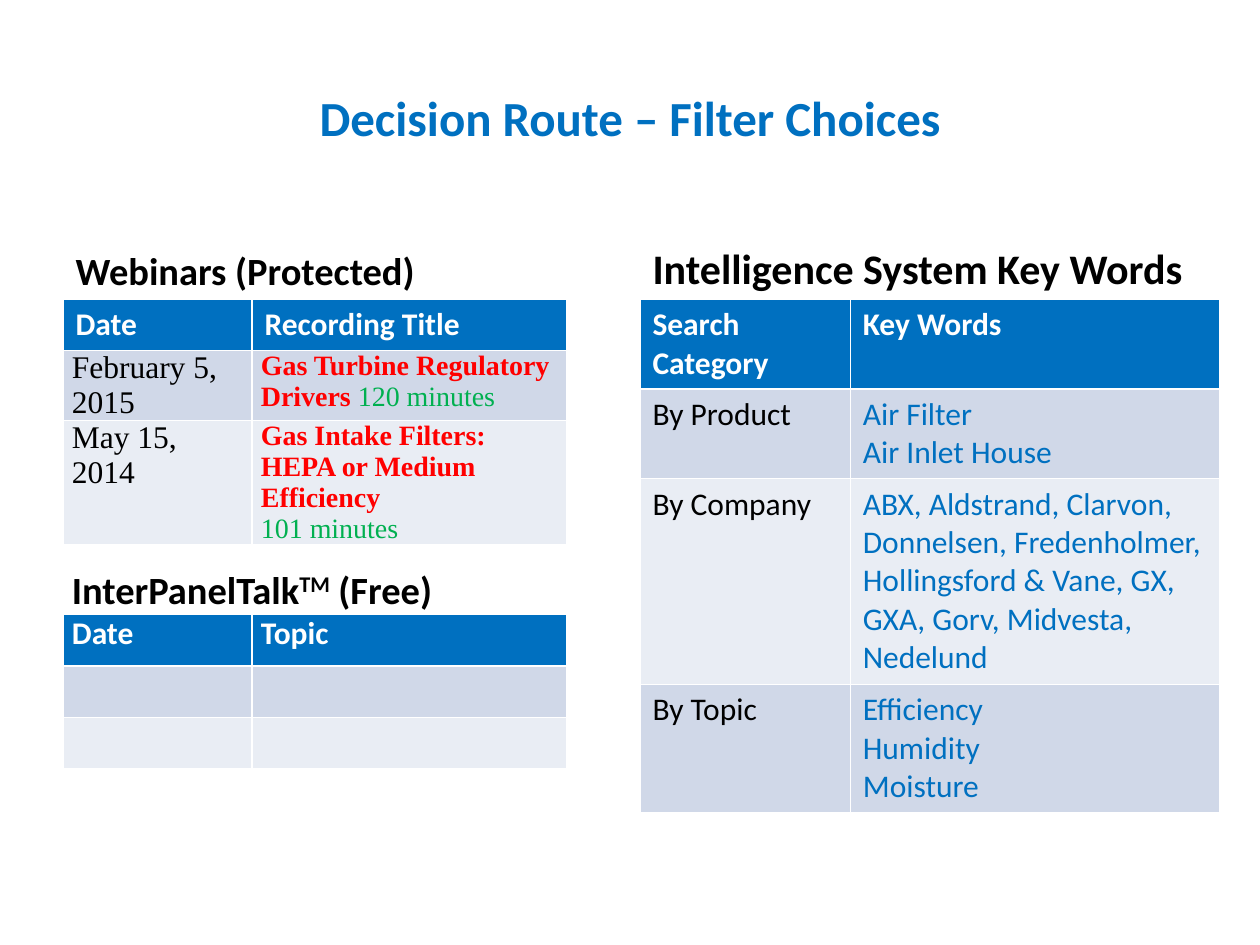
from dataclasses import dataclass
from pptx import Presentation
from pptx.dml.color import RGBColor
from pptx.enum import text
from pptx.util import Cm, Pt


@dataclass(frozen=True)
class Theme:
    """Colours, fonts and type sizes of the slide."""
    blue: str = "0070C0"
    white: str = "FFFFFF"
    black: str = "000000"
    red: str = "FF0000"
    green: str = "00B050"
    bands: tuple = ("D0D8E8", "E9EDF4")
    sans: str = "Calibri"
    serif: str = "Times New Roman"
    title: int = 28
    heading: int = 24
    subheading: int = 22
    body: int = 18
    small: int = 16


@dataclass(frozen=True)
class Style:
    """Look of one run of text."""
    size: int
    color: str
    bold: bool = False
    font: str = Theme.sans
    raised: bool = False


THEME = Theme()
TITLE = Style(THEME.title, THEME.blue, True)
HEADING = Style(THEME.heading, THEME.black, True)
SUBHEADING = Style(THEME.subheading, THEME.black, True)
TRADEMARK = Style(THEME.subheading, THEME.black, True, raised=True)
HEADER = Style(THEME.body, THEME.white, True)
LABEL = Style(THEME.body, THEME.black)
KEYWORD = Style(THEME.body, THEME.blue)
DATE = Style(THEME.body, THEME.black, font=THEME.serif)
RECORDING = Style(THEME.small, THEME.red, True, THEME.serif)
LENGTH = Style(THEME.small, THEME.green, font=THEME.serif)

HEADING_HEIGHT = 1.78


def write(frame, lines):
    """Fill a text frame with paragraphs, each a list of (words, style)."""
    for index, line in enumerate(lines):
        para = frame.add_paragraph() if index else frame.paragraphs[0]
        for words, style in line:
            span = para.add_run()
            span.text = words
            span.font.size = Pt(style.size)
            span.font.bold = style.bold
            span.font.name = style.font
            span.font.color.rgb = RGBColor.from_string(style.color)
            if style.raised:
                span._r.get_or_add_rPr().set("baseline", "30000")


def place(shape, left, top, width, height):
    """Move and size a shape, in centimetres."""
    shape.left, shape.top = Cm(left), Cm(top)
    shape.width, shape.height = Cm(width), Cm(height)


def fill_cell(cell, color, lines, tight=False):
    """Set the fill, margins and text of a table cell."""
    cell.fill.solid()
    cell.fill.fore_color.rgb = RGBColor.from_string(color)
    if tight:
        cell.margin_left = cell.margin_right = Cm(0.18)
        cell.margin_top = cell.margin_bottom = 0
    write(cell.text_frame, lines)


def add_grid(page, left, top, columns, rows):
    """Add a table with the given column widths and row heights."""
    grid = page.shapes.add_table(len(rows), len(columns), Cm(left), Cm(top),
                                 Cm(sum(columns)), Cm(sum(rows))).table
    for column, width in zip(grid.columns, columns):
        column.width = Cm(width)
    for row, height in zip(grid.rows, rows):
        row.height = Cm(height)
    return grid


def fill_rows(grid, start, names, records, tight_header=False, tight=False):
    """Write a header row and the banded records below it."""
    for column, name in enumerate(names):
        fill_cell(grid.cell(start, column), THEME.blue, [[(name, HEADER)]], tight_header)
    for index, record in enumerate(records):
        for column, lines in enumerate(record):
            fill_cell(grid.cell(start + 1 + index, column), THEME.bands[index % 2], lines, tight)


def add_title(page, left, top, width, height):
    """Place the slide title."""
    place(page.shapes.title, left, top, width, height)
    write(page.shapes.title.text_frame, [[("Decision Route – Filter Choices", TITLE)]])


def add_webinars(page, left, top, width):
    """Place the recordings region with its heading and table."""
    box = page.placeholders[1]
    place(box, left, top, width, HEADING_HEIGHT)
    write(box.text_frame, [[("Webinars (Protected)", SUBHEADING)]])
    grid = add_grid(page, left, top + HEADING_HEIGHT, [3.81, 6.35],
                    [1.03, 1.4, 2.5, 1.4, 1.04, 1.04, 1.04])
    fill_rows(grid, 0, ["Date", "Recording Title"], [
        ([[("February 5, 2015", DATE)]],
         [[("Gas Turbine Regulatory Drivers ", RECORDING), ("120 minutes", LENGTH)]]),
        ([[("May 15, 2014", DATE)]],
         [[("Gas Intake Filters: HEPA or Medium Efficiency", RECORDING)],
          [("101 minutes", LENGTH)]]),
    ], tight=True)
    divider = grid.cell(3, 0)
    divider.merge(grid.cell(3, 1))
    fill_cell(divider, THEME.white, [[("InterPanelTalk", SUBHEADING), ("TM", TRADEMARK),
                                      (" (Free)", SUBHEADING)]], tight=True)
    divider.vertical_anchor = text.MSO_ANCHOR.BOTTOM
    fill_rows(grid, 4, ["Date", "Topic"], [([], [])] * 2, tight_header=True)


def add_key_words(page, left, top, width):
    """Place the key word region with its heading and table."""
    box = page.placeholders[3]
    place(box, left, top, width, HEADING_HEIGHT)
    write(box.text_frame, [[("Intelligence System Key Words", HEADING)]])
    companies = ("ABX, Aldstrand, Clarvon, Donnelsen, Fredenholmer, "
                 "Hollingsford & Vane, GX, GXA, Gorv, Midvesta, Nedelund")
    topics = [
        ("By Product", ["Air Filter", "Air Inlet House"]),
        ("By Company", [companies]),
        ("By Topic", ["Efficiency", "Humidity", "Moisture"]),
    ]
    grid = add_grid(page, left, top + HEADING_HEIGHT, [4.24, 7.44], [1.78, 1.78, 4.15, 2.57])
    fill_rows(grid, 0, ["Search Category", "Key Words"],
              [([[(label, LABEL)]], [[(word, KEYWORD)] for word in words])
               for label, words in topics])


def main():
    """Build the deck."""
    deck = Presentation()
    deck.slide_width, deck.slide_height = Cm(25.4), Cm(19.05)
    page = deck.slides.add_slide(deck.slide_layouts[4])
    for index in (2, 4):
        unused = page.placeholders[index].element
        unused.getparent().remove(unused)
    add_title(page, 1.27, 0.76, 22.86, 3.18)
    add_webinars(page, 1.27, 4.26, 11.22)
    add_key_words(page, 12.9, 4.26, 11.23)
    deck.save("out.pptx")


if __name__ == "__main__":
    main()
